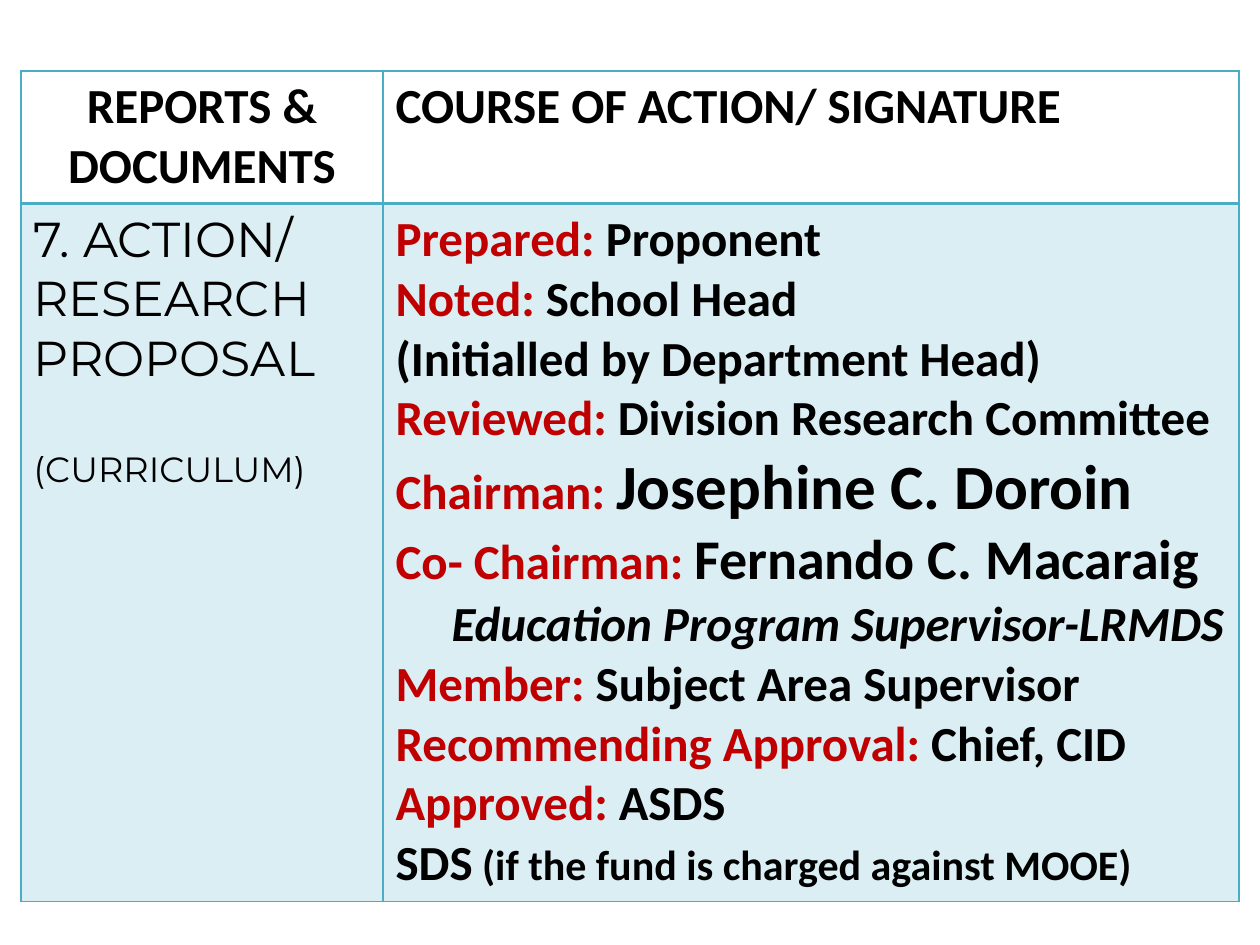
from lxml import etree
from pptx import Presentation
from pptx import util as u
from pptx.dml.color import RGBColor
from pptx.enum import text
from pptx.oxml.ns import qn

PX = 914400 / 126
BLACK, RED, TEAL, PALE = "000000", "C00000", "4BACC6", "DBEEF4"

# Label, rest of the line, size of the rest
SIGNATORIES = [
    ("Prepared: ", "Proponent", 28),
    ("Noted: ", "School Head", 28),
    ("", "(Initialled by Department Head)", 28),
    ("Reviewed: ", "Division Research Committee", 28),
    ("Chairman: ", "Josephine C. Doroin", 36),
    ("Co- Chairman: ", "Fernando C. Macaraig", 32),
    ("", "Education Program Supervisor-LRMDS", 28),
    ("Member: ", "Subject Area Supervisor", 28),
    ("Recommending Approval: ", "Chief, CID", 28),
    ("Approved: ", "ASDS", 28),
]


def px(n):
    return u.Emu(round(n * PX))


def color(hex_code):
    return RGBColor.from_string(hex_code)


def set_font(font, size=28, name="Calibri", bold=True, hex_code=BLACK):
    font.size, font.name, font.bold = u.Pt(size), name, bold
    font.color.rgb = color(hex_code)


def add_line(cell, parts, **style):
    """Add a paragraph; parts are (wording, font changes) pairs."""
    line = cell.text_frame.paragraphs[0]
    if line.runs:
        line = cell.text_frame.add_paragraph()
    set_font(line.font, **style)
    for wording, changes in parts:
        run = line.add_run()
        run.text = wording
        set_font(run.font, **{**style, **changes})
    return line


def set_borders(cell, **widths):
    """Draw the four edges, which come before the fill in the cell's XML."""
    props = cell._tc.get_or_add_tcPr()
    for i, side in enumerate("LRTB"):
        edge = etree.Element(qn(f"a:ln{side}"), w=str(u.Pt(widths.get(side, 1))))
        fill = etree.SubElement(edge, qn("a:solidFill"))
        etree.SubElement(fill, qn("a:srgbClr"), val=TEAL)
        props.insert(i, edge)


def fill_header(documents, action):
    line = add_line(documents, [("REPORTS & DOCUMENTS", {})])
    line.alignment = text.PP_ALIGN.CENTER
    add_line(action, [("COURSE OF ACTION/ SIGNATURE", {})])
    for cell in (documents, action):
        cell.fill.background()
        set_borders(cell, B=2)


def fill_body(documents, action):
    light = {"name": "Montserrat", "bold": False}
    add_line(documents, [("7. ACTION/ RESEARCH PROPOSAL", {})], **light)
    unit = add_line(documents, [("(CURRICULUM)", {})], size=20, **light)
    unit.space_before = u.Pt(34)

    for label, rest, size in SIGNATORIES:
        parts = [(label, {"hex_code": RED})] if label else []
        line = add_line(action, parts + [(rest, {"size": size})])
        if rest.startswith("Education"):
            line.font.italic = line.runs[0].font.italic = True
            line._p.get_or_add_pPr().set("marL", str(px(56)))
    add_line(action, [("SDS", {}), (" (if the fund is charged against MOOE)", {"size": 24})])

    for cell in (documents, action):
        cell.fill.solid()
        cell.fill.fore_color.rgb = color(PALE)
        set_borders(cell, T=2)


def add_routing_table(slide, left, top, widths, heights):
    frame = slide.shapes.add_table(
        len(heights), len(widths), px(left), px(top), px(sum(widths)), px(sum(heights)))
    table = frame.table
    table.first_row = table.horz_banding = False
    for column, width in zip(table.columns, widths):
        column.width = px(width)
    for row, height in zip(table.rows, heights):
        row.height = px(height)
    fill_header(*table.rows[0].cells)
    fill_body(*table.rows[1].cells)


def main():
    deck = Presentation()
    deck.slide_width, deck.slide_height = px(1260), px(945)
    slide = deck.slides.add_slide(deck.slide_layouts[6])
    add_routing_table(slide, 21, 71, widths=(362, 856), heights=(132, 698))
    deck.save("out.pptx")


if __name__ == "__main__":
    main()
